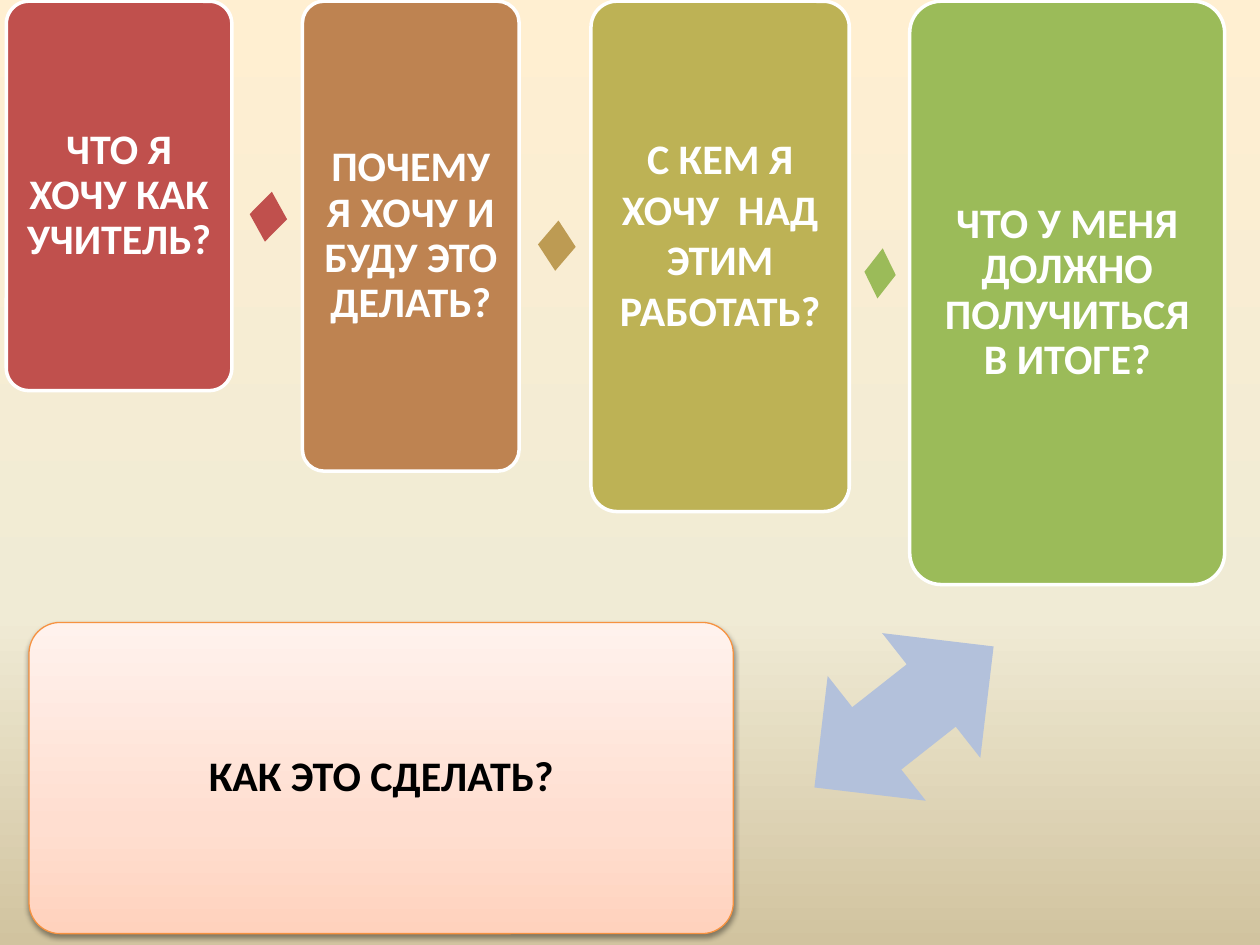
import dataclasses
import typing

import lxml.etree
import pptx
import pptx.dml.color
import pptx.enum.shapes
import pptx.enum.text
import pptx.oxml.ns
import pptx.util

SHAPES = pptx.enum.shapes.MSO_SHAPE
COLUMNS, ROWS = 100, 75
Stops = tuple[tuple[int, str], ...]


@dataclasses.dataclass(frozen=True)
class Theme:
    font: str = "Calibri"
    size: float = 24
    light: str = "FFFFFF"
    dark: str = "000000"
    red: str = "C0504D"
    brown: str = "BE8351"
    ochre: str = "BD9B53"
    olive: str = "BDB255"
    green: str = "9BBB59"
    blue: str = "B3C1DB"
    orange: str = "F69240"
    backdrop: Stops = ((0, "FFEFD1"), (65, "F0EBD5"), (100, "D1C39F"))
    peach: Stops = ((0, "FFD2BD"), (35, "FFDED0"), (100, "FFF2ED"))


THEME = Theme()


@dataclasses.dataclass(frozen=True)
class Area:
    column: float
    row: float
    columns: float
    rows: float


@dataclasses.dataclass(frozen=True)
class Card:
    area: Area
    text: str
    fill: str | Stops
    line: str = THEME.light
    line_width: float = 2
    ink: str = THEME.light
    inset: float = 0.1
    extra_bottom: float = 0
    spacing: float = 0.9


@dataclasses.dataclass(frozen=True)
class Arrow:
    area: Area
    fill: str
    rotation: float


CARDS = (
    Card(Area(0.5, 0.1, 17.9, 30.9), "ЧТО Я ХОЧУ КАК УЧИТЕЛЬ?", THEME.red),
    Card(Area(24, 0.1, 17.2, 37.3), "ПОЧЕМУ Я ХОЧУ И БУДУ ЭТО ДЕЛАТЬ?", THEME.brown),
    Card(Area(46.9, 0.1, 20.5, 40.5), "С КЕМ Я ХОЧУ  НАД ЭТИМ РАБОТАТЬ?", THEME.olive,
         extra_bottom=0.36, spacing=1),
    Card(Area(72.2, 0.1, 25, 46.3), "ЧТО У МЕНЯ ДОЛЖНО ПОЛУЧИТЬСЯ В ИТОГЕ?", THEME.green),
    Card(Area(2.3, 49.4, 55.9, 24.7), "КАК ЭТО СДЕЛАТЬ?", THEME.peach,
         line=THEME.orange, line_width=0.75, ink=THEME.dark, inset=0.07),
)
ARROWS = (
    Arrow(Area(19.8, 15.2, 3, 4), THEME.red, 7.9),
    Arrow(Area(42.7, 17.5, 3, 4), THEME.ochre, 3.7),
    Arrow(Area(68.6, 19.7, 2.5, 4), THEME.green, 6),
    Arrow(Area(62.7, 50.6, 18.1, 12.6), THEME.blue, 321.8),
)


def color(value: str) -> pptx.dml.color.RGBColor:
    return pptx.dml.color.RGBColor.from_string(value)


def add_element(parent: typing.Any, tag: str, **attributes: typing.Any) -> typing.Any:
    values = {name: str(value) for name, value in attributes.items()}
    return lxml.etree.SubElement(parent, pptx.oxml.ns.qn(tag), values)


def set_gradient(owner: typing.Any, fill: typing.Any, stops: Stops, angle: float) -> None:
    fill.gradient()
    fill.gradient_angle = angle
    stop_list = next(owner.iter(pptx.oxml.ns.qn("a:gsLst")))
    for stop in list(stop_list):
        stop_list.remove(stop)
    for position, value in stops:
        stop = add_element(stop_list, "a:gs", pos=position * 1000)
        add_element(stop, "a:srgbClr", val=value)


def add_shadow(shape: typing.Any) -> None:
    effects = next(shape.element.iter(pptx.oxml.ns.qn("a:effectLst")))
    shadow = add_element(effects, "a:outerShdw", blurRad=pptx.util.Pt(3.1),
                         dist=pptx.util.Pt(1.6), dir=5400000, rotWithShape=0)
    tint = add_element(shadow, "a:srgbClr", val=THEME.dark)
    add_element(tint, "a:alpha", val=38000)


def add_preset(deck: typing.Any, page: typing.Any, preset: typing.Any, area: Area) -> typing.Any:
    width, height = deck.slide_width / COLUMNS, deck.slide_height / ROWS
    shape = page.shapes.add_shape(
        preset, int(area.column * width), int(area.row * height),
        int(area.columns * width), int(area.rows * height))
    shape.shadow.inherit = False
    return shape


def draw_card(deck: typing.Any, page: typing.Any, card: Card) -> None:
    box = add_preset(deck, page, SHAPES.ROUNDED_RECTANGLE, card.area)
    box.adjustments[0] = 0.1
    if isinstance(card.fill, str):
        box.fill.solid()
        box.fill.fore_color.rgb = color(card.fill)
    else:
        set_gradient(box.element, box.fill, card.fill, 90)
        add_shadow(box)
    box.line.color.rgb = color(card.line)
    box.line.width = pptx.util.Pt(card.line_width)
    frame = box.text_frame
    frame.word_wrap = True
    frame.vertical_anchor = pptx.enum.text.MSO_ANCHOR.MIDDLE
    frame.margin_left = frame.margin_right = frame.margin_top = pptx.util.Inches(card.inset)
    frame.margin_bottom = pptx.util.Inches(card.inset + card.extra_bottom)
    frame.text = card.text
    para = frame.paragraphs[0]
    para.alignment = pptx.enum.text.PP_ALIGN.CENTER
    para.line_spacing = card.spacing
    for span in para.runs:
        span.font.name = THEME.font
        span.font.size = pptx.util.Pt(THEME.size)
        span.font.bold = True
        span.font.color.rgb = color(card.ink)


def draw_arrow(deck: typing.Any, page: typing.Any, arrow: Arrow) -> None:
    shape = add_preset(deck, page, SHAPES.LEFT_RIGHT_ARROW, arrow.area)
    shape.rotation = arrow.rotation
    shape.fill.solid()
    shape.fill.fore_color.rgb = color(arrow.fill)
    shape.line.fill.background()


def main() -> None:
    deck = pptx.Presentation()
    deck.slide_width = pptx.util.Inches(10)
    deck.slide_height = pptx.util.Inches(7.5)
    page = deck.slides.add_slide(deck.slide_layouts[6])
    set_gradient(page.element, page.background.fill, THEME.backdrop, 270)
    for card in CARDS:
        draw_card(deck, page, card)
    for arrow in ARROWS:
        draw_arrow(deck, page, arrow)
    deck.save("out.pptx")


if __name__ == "__main__":
    main()
